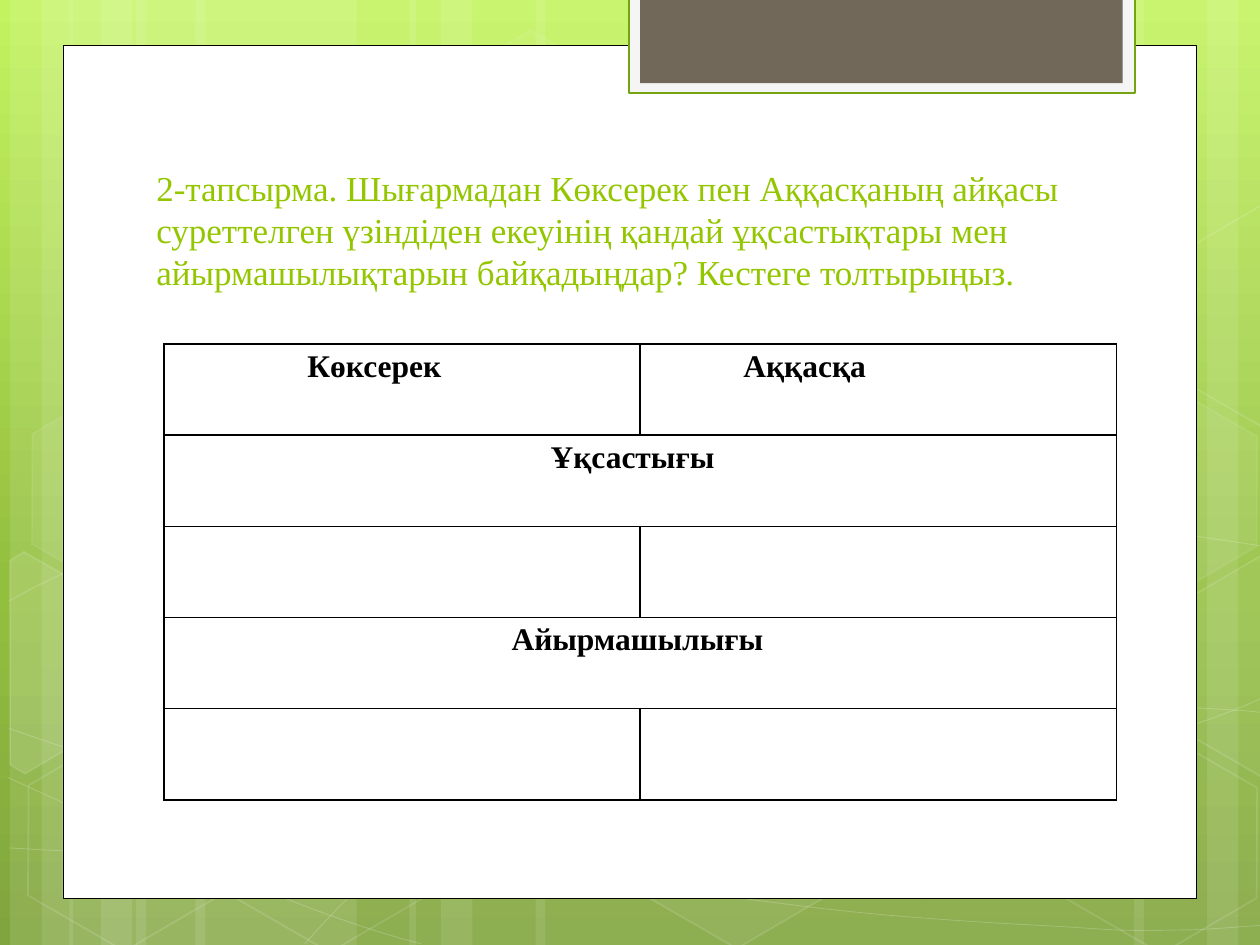
from copy import deepcopy
from dataclasses import dataclass

from lxml import etree
from pptx import Presentation
from pptx.dml.color import RGBColor
from pptx.enum.shapes import MSO_SHAPE
from pptx.enum.text import MSO_ANCHOR, MSO_AUTO_SIZE, PP_ALIGN
from pptx.oxml.ns import qn
from pptx.util import Inches, Pt

RECT, HEXAGON = MSO_SHAPE.RECTANGLE, MSO_SHAPE.HEXAGON
LEFT, BOTTOM, FIXED = PP_ALIGN.LEFT, MSO_ANCHOR.BOTTOM, MSO_AUTO_SIZE.NONE


@dataclass(frozen=True)
class Theme:
    font: str = "Times New Roman"
    title: int = 20
    body: int = 18
    lime: str = "94C600"
    edge: str = "74A510"
    white: str = "FFFFFF"
    pale: str = "F5F5F5"
    brown: str = "71685A"
    black: str = "000000"
    back: tuple = ((0, "C3F35F"), (0.62, "93BF3F"), (1, "81A53E"))


THEME = Theme()

# Background beams: left, width
BEAMS = [(1.08, 1.75), (0.08, 0.5), (0.33, 0.83), (1.55, 1.75), (0.55, 0.5),
         (0.8, 0.83), (7.33, 1.75), (9.58, 0.5), (9, 0.83), (4.25, 3.08),
         (3.25, 0.5), (3.5, 0.83)]

# Bezier waves: a start point, then three points for each segment
WAVES = [
    [(0.07, 6.73), (0.61, 6.76), (1.15, 6.79), (1.9, 6.78),
     (2.65, 6.77), (3.58, 6.75), (4.58, 6.65), (5.58, 6.55), (7, 6.36),
     (7.92, 6.17), (8.83, 5.98), (9.77, 5.68), (10.07, 5.51)],
    [(0.07, 4.77), (0.36, 4.61), (0.65, 4.46), (1.21, 4.31),
     (1.78, 4.16), (2.59, 3.94), (3.47, 3.87), (4.36, 3.8), (5.44, 3.79),
     (6.54, 3.87), (7.64, 3.95), (9.47, 4.26), (10.07, 4.34)],
    [(0.06, 6.17), (1.27, 6.72), (2.47, 7.27), (3.34, 7.49)],
    [(0.07, 5.78), (0.38, 5.89), (0.7, 6), (1.28, 6.16),
     (1.86, 6.31), (2.73, 6.56), (3.57, 6.73), (4.4, 6.9), (5.45, 7.08),
     (6.28, 7.18), (7.11, 7.29), (8, 7.33), (8.53, 7.36),
     (9.05, 7.4), (9.19, 7.38), (9.45, 7.38), (9.71, 7.37), (9.89, 7.35),
     (10.07, 7.34)],
    [(2.42, 7.49), (2.6, 7.29), (2.78, 7.09), (3.02, 6.91),
     (3.26, 6.73), (3.6, 6.53), (3.88, 6.39), (4.16, 6.25), (4.33, 6.19),
     (4.7, 6.09), (5.06, 5.99), (5.73, 5.85), (6.08, 5.78),
     (6.44, 5.71), (6.49, 5.71), (6.8, 5.69), (7.11, 5.66), (7.6, 5.63),
     (7.94, 5.62), (8.29, 5.61), (8.86, 5.62), (8.86, 5.62),
     (9.08, 5.62), (9.31, 5.62), (9.53, 5.62),
     (9.71, 5.63), (9.88, 5.64), (9.97, 5.65),
     (10.06, 5.66), (10.03, 5.65), (10.06, 5.66)],
]

# Hexagons: left, top, fill opacity, line opacity
HEXES = [(3.34, 0.36, 4, 8), (4.97, 5.89, 6, 12), (0.11, 5.91, 0, 12),
         (0.14, 3.12, 7, 8), (1.74, 5.92, 0, 12), (7.53, 4.53, 10, 12),
         (8.34, 5.93, 0, 12), (8.34, 3.14, 7, 8)]

# Hexagons cut by the slide edge: fill opacity, corners
CUTS = [
    (10, [(0.08, 4.45), (0.19, 4.38), (0.96, 4.82), (0.95, 5.7),
          (0.2, 6.14), (0.08, 6.07)]),
    (4, [(9.26, 4.85), (10.01, 4.41), (10.09, 4.46), (10.09, 6.13),
         (10.02, 6.17), (9.26, 5.73)]),
    (0, [(9.26, 2.07), (10.01, 1.63), (10.1, 1.68), (10.09, 3.35),
         (10.02, 3.39), (9.26, 2.95)]),
]

# Table labels: row, column, indent, text
LABELS = [(0, 0, 1.07, "Көксерек"), (0, 1, 0.75, "Аққасқа"),
          (1, 0, 3, "Ұқсастығы"), (3, 0, 2.69, "Айырмашылығы")]


def tint(fill, color, alpha):
    """Solid colour with opacity in percent; zero means no fill."""
    if not alpha:
        fill.background()
        return
    fill.solid()
    fill.fore_color.rgb = RGBColor.from_string(color)
    if alpha < 100:
        node = fill._xPr.find(qn("a:solidFill"))[0]
        etree.SubElement(node, qn("a:alpha")).set("val", str(alpha * 1000))


def paint(shape, color, alpha=100, line=None, width=1, clear=100):
    shape.shadow.inherit = False
    tint(shape.fill, color, alpha)
    tint(shape.line.fill, line, clear if line else 0)
    if line:
        shape.line.width = Pt(width)


def add_box(slide, kind, box, *look):
    shape = slide.shapes.add_shape(kind, *map(Inches, box))
    paint(shape, *look)
    return shape


def add_path(slide, points, close, *look):
    start, *rest = [(Inches(x), Inches(y)) for x, y in points]
    pen = slide.shapes.build_freeform(*start)
    pen.add_line_segments(rest, close=close)
    shape = pen.convert_to_shape()
    paint(shape, *look)
    return shape


def bend(shape):
    """Turn each three line segments into one cubic curve."""
    lines = list(shape._element.iter(qn("a:lnTo")))
    for i in range(0, len(lines), 3):
        curve = etree.Element(qn("a:cubicBezTo"))
        lines[i].addprevious(curve)
        for line in lines[i:i + 3]:
            curve.append(line[0])
            line.getparent().remove(line)


def add_back(slide):
    fill = slide.background.fill
    fill.gradient()
    fill.gradient_angle = 270
    stops = slide._element.find(".//" + qn("a:gsLst"))
    stops.append(deepcopy(stops[0]))
    for stop, (place, color) in zip(fill.gradient_stops, THEME.back):
        stop.position = place
        stop.color.rgb = RGBColor.from_string(color)


def add_decor(slide):
    white = THEME.white
    for left, width in BEAMS:
        add_box(slide, RECT, (left, 0, width, 7.5), white, 10)
    for knots in WAVES:
        bend(add_path(slide, knots, False, white, 0, white, 0.5, 20))
    for left, top, alpha, clear in HEXES:
        hexa = add_box(slide, HEXAGON, (left, top, 1.75, 1.52),
                       white, alpha, white, 1, clear)
        hexa.adjustments[0] = 0.285
        hexa.rotation = 30
    for alpha, points in CUTS:
        add_path(slide, points, True, white, alpha, white, 1, 12)


def add_panel(slide):
    add_box(slide, RECT, (0.5, 0.36, 9, 6.77), THEME.white, 100, THEME.black, 0.5)
    add_box(slide, RECT, (4.99, -0.02, 4.02, 0.76), THEME.pale, 100, THEME.edge, 1.25)
    add_box(slide, RECT, (5.08, -0.02, 3.83, 0.68), THEME.brown)


def set_font(para, size, color, bold):
    font = para.font
    font.name, font.size, font.bold = THEME.font, Pt(size), bold
    font.color.rgb = RGBColor.from_string(color)


def set_title(slide, text):
    title = slide.shapes.title
    title.left, title.top, title.width, title.height = map(
        Inches, (1.14, 1.12, 7.68, 1.25))
    frame = title.text_frame
    frame.text = text
    frame.word_wrap, frame.auto_size = True, FIXED
    frame.vertical_anchor = BOTTOM
    para = frame.paragraphs[0]
    para.alignment = LEFT
    set_font(para, THEME.title, THEME.lime, False)
    slide.shapes._spTree.append(title._element)  # in front of the panel


def set_edges(cell):
    props = cell._tc.get_or_add_tcPr()
    for n, side in enumerate(("lnL", "lnR", "lnT", "lnB")):
        edge = etree.Element(qn("a:" + side), w=str(Pt(1)))
        solid = etree.SubElement(edge, qn("a:solidFill"))
        etree.SubElement(solid, qn("a:srgbClr"), val=THEME.black)
        props.insert(n, edge)


def add_grid(slide):
    grid = slide.shapes.add_table(
        5, 2, *map(Inches, (1.3, 2.73, 7.56, 3.62))).table
    grid.first_row = grid.horz_banding = False
    for cell in grid.iter_cells():
        cell.fill.background()
        cell.margin_left = cell.margin_right = Inches(0.07)
        cell.margin_top = cell.margin_bottom = 0
        set_edges(cell)
    for row in (1, 3):
        grid.cell(row, 0).merge(grid.cell(row, 1))
    for row, col, indent, text in LABELS:
        para = grid.cell(row, col).text_frame.paragraphs[0]
        para.text = text
        para.line_spacing = 1.15
        para._p.get_or_add_pPr().set("marL", str(Inches(indent)))
        set_font(para, THEME.body, THEME.black, True)


def main():
    deck = Presentation()
    deck.slide_width, deck.slide_height = Inches(10), Inches(7.5)
    slide = deck.slides.add_slide(deck.slide_layouts[5])
    add_back(slide)
    add_decor(slide)
    add_panel(slide)
    set_title(slide, "2-тапсырма. Шығармадан Көксерек пен Аққасқаның айқасы "
                     "суреттелген үзіндіден екеуінің қандай ұқсастықтары мен "
                     "айырмашылықтарын байқадыңдар? Кестеге толтырыңыз.")
    add_grid(slide)
    deck.save("out.pptx")


if __name__ == "__main__":
    main()
